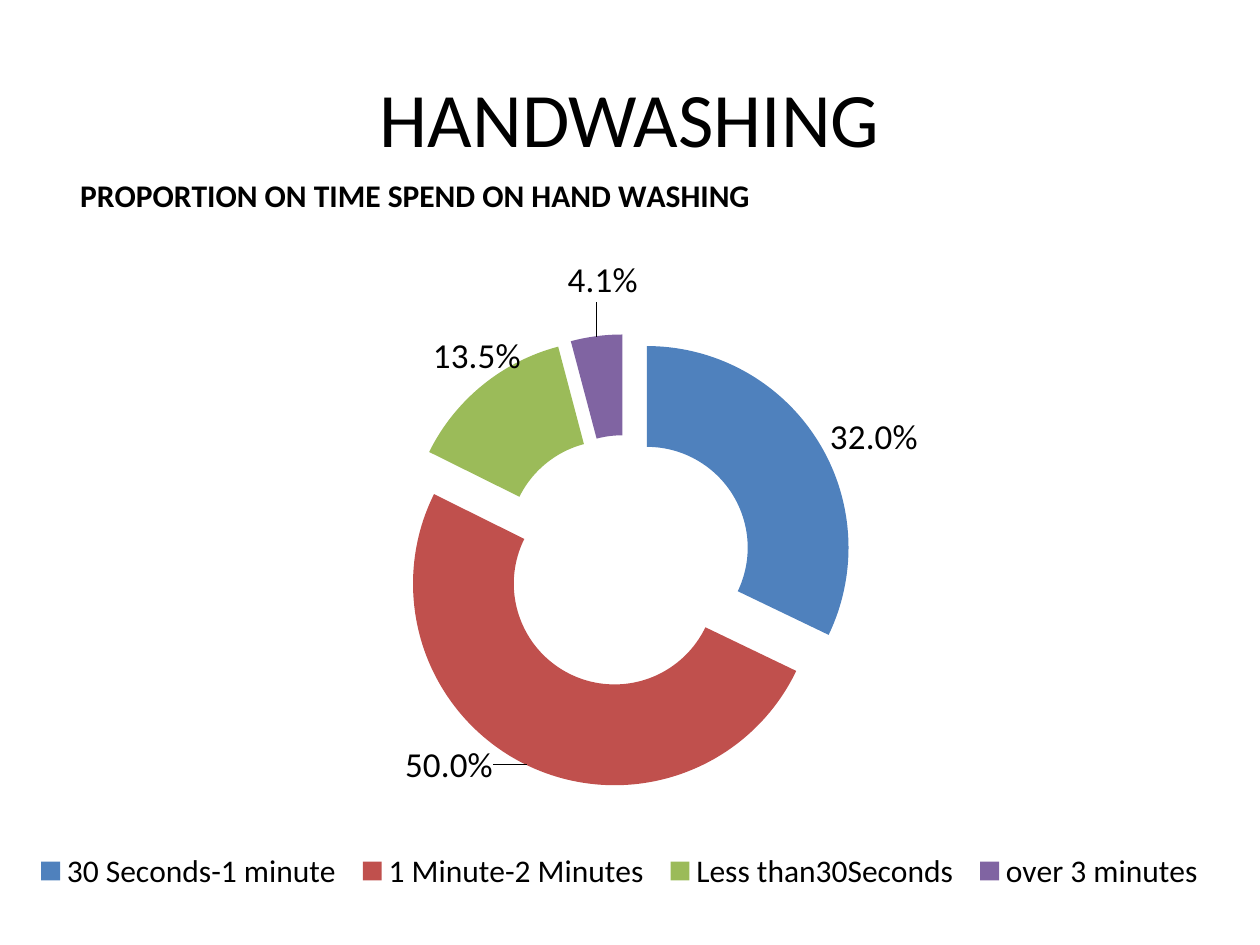
"""Build the hand washing slide with its exploded doughnut chart."""
from lxml.etree import SubElement
from pptx import Presentation
from pptx.chart.data import CategoryChartData
from pptx.dml.color import RGBColor
from pptx.enum.chart import XL_CHART_TYPE, XL_LEGEND_POSITION
from pptx.enum.text import MSO_ANCHOR, PP_ALIGN
from pptx.oxml.ns import qn
from pptx.util import Pt

FONT = "Calibri"
BLACK = "000000"
PERCENT = "0.0%"
SLICES = [
    ("30 Seconds-1 minute", 0.32, "4F81BD", (0.08, -0.04)),
    ("1 Minute-2 Minutes", 0.5, "C0504D", (-0.08, 0.06)),
    ("Less than30Seconds", 0.135, "9BBB59", (-0.03, -0.09)),
    ("over 3 minutes", 0.041, "8064A2", (0, -0.14)),
]


def color(value):
    """Return the colour for a hex string."""
    return RGBColor.from_string(value)


def style_font(font, size, bold=False):
    """Apply the slide's typeface in black at a given size."""
    font.name = FONT
    font.size = Pt(size)
    font.bold = bold
    font.color.rgb = color(BLACK)


def add_heading(slide, text):
    """Add the centred slide heading."""
    shape = slide.shapes.add_textbox(Pt(36), Pt(21.6), Pt(648), Pt(90))
    text_frame = shape.text_frame
    text_frame.word_wrap = True
    text_frame.vertical_anchor = MSO_ANCHOR.MIDDLE
    text_frame.text = text
    paragraph = text_frame.paragraphs[0]
    paragraph.alignment = PP_ALIGN.CENTER
    style_font(paragraph.runs[0].font, 44)


def set_layout(element, index, **settings):
    """Give a chart element a manual layout at a child index."""
    for old_layout in element.findall(qn("c:layout")):
        element.remove(old_layout)
    layout = SubElement(element, qn("c:layout"))
    manual = SubElement(layout, qn("c:manualLayout"))
    for name, value in settings.items():
        SubElement(manual, qn(f"c:{name}")).set("val", str(value))
    element.insert(index, layout)


def explode(series, percent):
    """Move all slices of a series outwards."""
    element = series._element
    explosion = SubElement(element, qn("c:explosion"))
    explosion.set("val", str(percent))
    series.format.fill.background()
    element.find(qn("c:spPr")).addnext(explosion)


def style_slice(series, index, fill, shift):
    """Colour a slice and shift its percentage label."""
    point = series.points[index]
    point.format.fill.solid()
    point.format.fill.fore_color.rgb = color(fill)
    style_font(point.data_label.font, 20)
    label = series.data_labels._element.findall(qn("c:dLbl"))[index]
    set_layout(label, 1, x=shift[0], y=shift[1])
    number_format = SubElement(label, qn("c:numFmt"))
    number_format.set("formatCode", PERCENT)
    number_format.set("sourceLinked", "0")
    label.insert(2, number_format)


def add_title(chart, text):
    """Add the chart title at the upper left."""
    title = chart.chart_title
    title.text_frame.text = text
    style_font(title.text_frame.paragraphs[0].runs[0].font, 18, bold=True)
    title.include_in_layout = False
    set_layout(title._element, 1, xMode="edge", yMode="edge", x=0.06, y=0)


def add_legend(chart):
    """Add the legend in one row below the plot."""
    chart.has_legend = True
    legend = chart.legend
    legend.position = XL_LEGEND_POSITION.BOTTOM
    legend.include_in_layout = False
    style_font(legend.font, 18)
    set_layout(legend._element, 1, xMode="edge", yMode="edge",
               x=0.02, y=0.89, w=0.96, h=0.08)


def add_doughnut(slide):
    """Add the doughnut chart of washing times."""
    data = CategoryChartData(number_format=PERCENT)
    data.categories = [name for name, *_ in SLICES]
    data.add_series("Series 1", [share for _, share, *_ in SLICES])
    chart = slide.shapes.add_chart(
        XL_CHART_TYPE.DOUGHNUT, Pt(0), Pt(96), Pt(708), Pt(432), data
    ).chart
    style_font(chart.font, 10)
    add_title(chart, "PROPORTION ON TIME SPEND ON HAND WASHING")
    add_legend(chart)
    plot_area = chart._chartSpace.chart.plotArea
    set_layout(plot_area, 0, layoutTarget="inner", xMode="edge", yMode="edge",
               x=0.32, y=0.22, w=0.37, h=0.6)
    series = chart.plots[0].series[0]
    explode(series, 25)
    labels = series.data_labels
    labels.show_value = True
    labels.number_format = PERCENT
    labels.number_format_is_linked = False
    style_font(labels.font, 20)
    for index, (_, _, fill, shift) in enumerate(SLICES):
        style_slice(series, index, fill, shift)


def main():
    """Create and save the presentation."""
    presentation = Presentation()
    presentation.slide_width = Pt(720)
    presentation.slide_height = Pt(540)
    slide = presentation.slides.add_slide(presentation.slide_layouts[6])
    add_heading(slide, "HANDWASHING")
    add_doughnut(slide)
    presentation.save("out.pptx")


if __name__ == "__main__":
    main()
